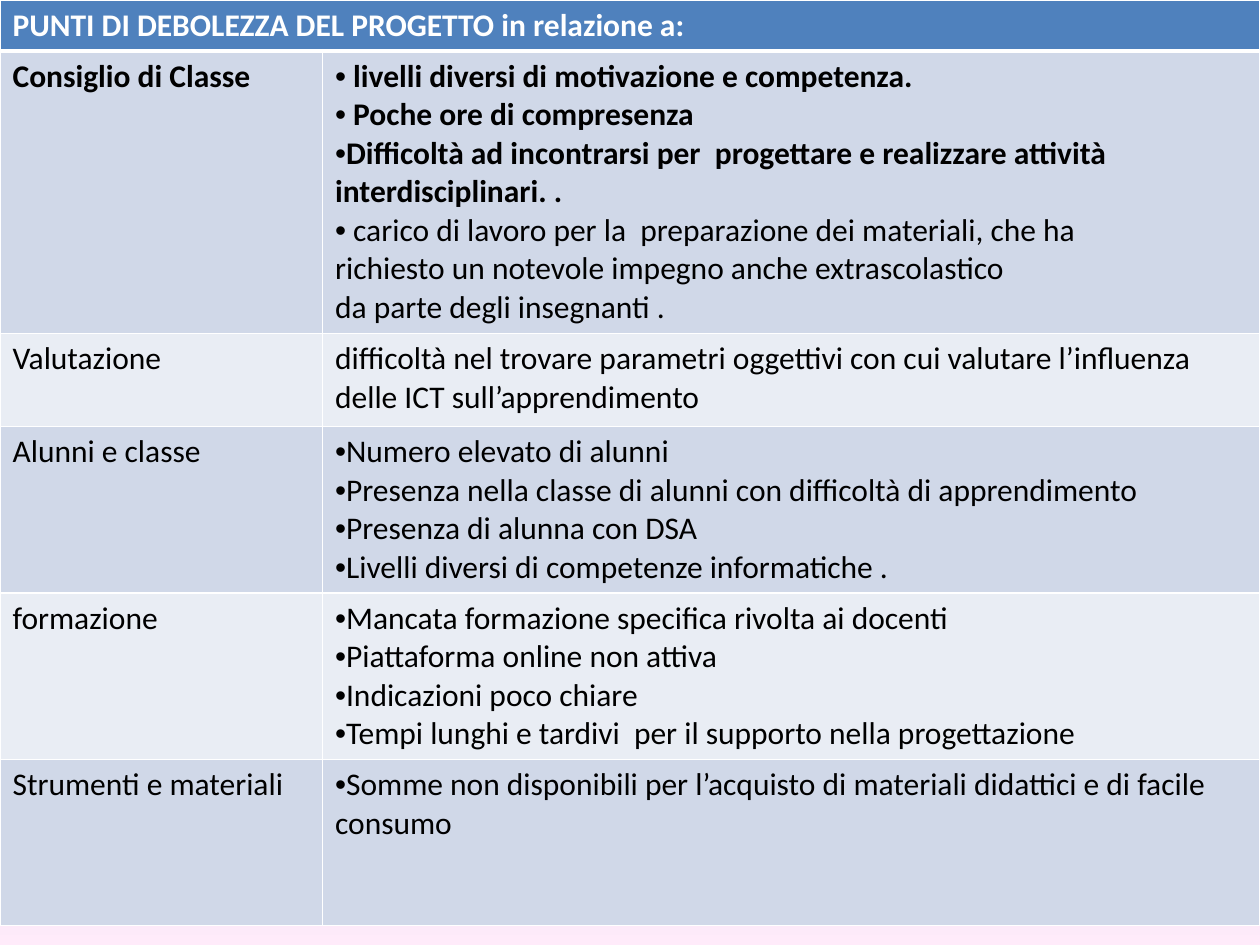
from copy import deepcopy
from dataclasses import dataclass

from lxml import etree
from pptx import Presentation
from pptx import util as u
from pptx.dml.color import RGBColor
from pptx.oxml.ns import qn


@dataclass(frozen=True)
class Theme:
    font: str = "Calibri"
    size: int = 18
    header: str = "4F81BD"
    bands: tuple = ("D0D8E8", "E9EDF4")
    ink: str = "000000"
    white: str = "FFFFFF"
    sky: tuple = ((0, "5E9EFF"), (40, "85C2FF"), (70, "C4D6EB"), (100, "FFEBFA"))


THEME = Theme()
BULLET = "•"
HEADING = "PUNTI DI DEBOLEZZA DEL PROGETTO in relazione a:"
COL_WIDTHS = (2.56, 7.44)
HEADER_HEIGHT = 0.4

# Each row: height, topic, bold topic, lines; each line: text, bulleted, bold
ROWS = [
    (2.24, "Consiglio di Classe", True, [
        (" livelli diversi di motivazione e competenza.", True, True),
        (" Poche ore di compresenza", True, True),
        ("Difficoltà ad incontrarsi per  progettare e realizzare attività "
         "interdisciplinari. .", True, True),
        (" carico di lavoro per la  preparazione dei materiali, che ha", True, False),
        ("richiesto un notevole impegno anche extrascolastico", False, False),
        ("da parte degli insegnanti .", False, False),
    ]),
    (0.74, "Valutazione", False, [
        ("difficoltà nel trovare parametri oggettivi con cui valutare l’influenza "
         "delle ICT sull’apprendimento", False, False),
    ]),
    (1.32, "Alunni e classe", False, [
        ("Numero elevato di alunni", True, False),
        ("Presenza nella classe di alunni con difficoltà di apprendimento", True, False),
        ("Presenza di alunna con DSA", True, False),
        ("Livelli diversi di competenze informatiche .", True, False),
    ]),
    (1.32, "formazione", False, [
        ("Mancata formazione specifica rivolta ai docenti", True, False),
        ("Piattaforma online non attiva", True, False),
        ("Indicazioni poco chiare", True, False),
        ("Tempi lunghi e tardivi  per il supporto nella progettazione", True, False),
    ]),
    (1.32, "Strumenti e materiali", False, [
        ("Somme non disponibili per l’acquisto di materiali didattici e di facile "
         "consumo", True, False),
    ]),
]


def paint_background(s):
    """Vertical gradient with one stop for each theme colour."""
    fill = s.background.fill
    fill.gradient()
    fill.gradient_angle = 270
    stops = s._element.find(".//" + qn("a:gsLst"))
    model = deepcopy(stops[0])
    for stop in list(stops):
        stops.remove(stop)
    for _ in THEME.sky:
        stops.append(deepcopy(model))
    for stop, (position, color) in zip(fill.gradient_stops, THEME.sky):
        stop.position = position / 100
        stop.color.rgb = RGBColor.from_string(color)


def set_borders(cell, bottom=1):
    tcPr = cell._tc.get_or_add_tcPr()
    for i, (side, width) in enumerate((("L", 1), ("R", 1), ("T", 1), ("B", bottom))):
        ln = etree.Element(qn(f"a:ln{side}"), w=str(u.Pt(width)))
        fill = etree.SubElement(ln, qn("a:solidFill"))
        etree.SubElement(fill, qn("a:srgbClr"), val=THEME.white)
        tcPr.insert(i, ln)


def fill_cell(cell, lines, fill, ink):
    cell.fill.solid()
    cell.fill.fore_color.rgb = RGBColor.from_string(fill)
    tf = cell.text_frame
    for i, (line, bulleted, bold) in enumerate(lines):
        p = tf.add_paragraph() if i else tf.paragraphs[0]
        p.add_run().text = line
        p.font.name, p.font.size, p.font.bold = THEME.font, u.Pt(THEME.size), bold
        p.font.color.rgb = RGBColor.from_string(ink)
        if bulleted:
            pPr = p._p.get_or_add_pPr()
            pPr.insert(0, etree.Element(qn("a:buChar"), char=BULLET))
            pPr.insert(0, etree.Element(qn("a:buFont"), typeface="Arial"))


def add_weakness_table(s, left, top, width, height):
    frame = s.shapes.add_table(len(ROWS) + 1, len(COL_WIDTHS), left, top, width, height)
    table = frame.table
    table.first_row = table.horz_banding = False
    for col, col_width in zip(table.columns, COL_WIDTHS):
        col.width = u.Inches(col_width)

    # Heading across both columns
    table.rows[0].height = u.Inches(HEADER_HEIGHT)
    table.cell(0, 0).merge(table.cell(0, 1))
    fill_cell(table.cell(0, 0), [(HEADING, False, True)], THEME.header, THEME.white)
    for col in range(len(COL_WIDTHS)):
        set_borders(table.cell(0, col), bottom=3)

    # Topic and its weak points, in alternating bands
    for i, (row_height, topic, bold, lines) in enumerate(ROWS, 1):
        table.rows[i].height = u.Inches(row_height)
        band = THEME.bands[(i - 1) % 2]
        for col, content in enumerate(([(topic, False, bold)], lines)):
            cell = table.cell(i, col)
            fill_cell(cell, content, band, THEME.ink)
            set_borders(cell)
            if i == 1:
                cell._tc.tcPr.find(qn("a:lnT")).set("w", str(u.Pt(3)))


def main():
    prs = Presentation()
    prs.slide_width, prs.slide_height = u.Inches(10), u.Inches(7.5)
    s = prs.slides.add_slide(prs.slide_layouts[6])
    paint_background(s)
    table_height = HEADER_HEIGHT + sum(row[0] for row in ROWS)
    add_weakness_table(s, 0, 0, prs.slide_width, u.Inches(table_height))
    prs.save("out.pptx")


if __name__ == "__main__":
    main()
